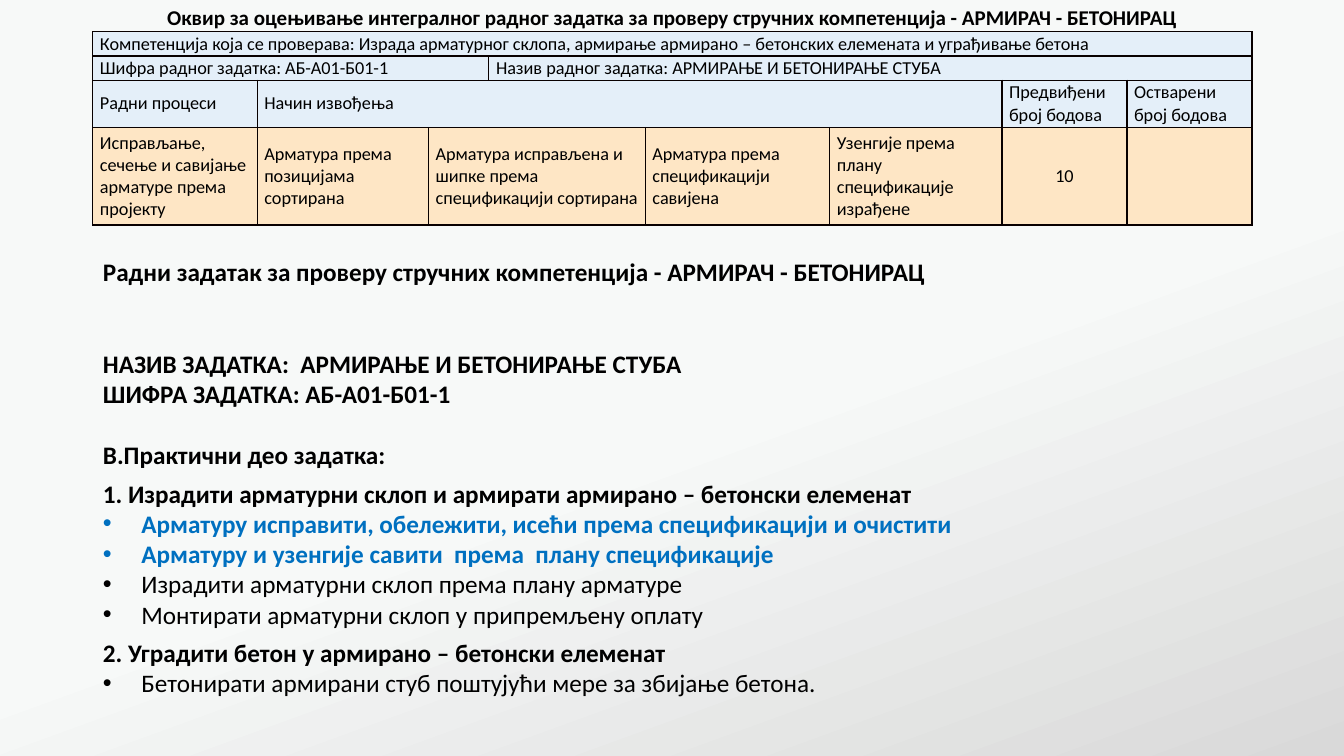
from lxml import etree
from pptx import Presentation
from pptx.dml import color
from pptx.enum import text
from pptx.oxml import ns
from pptx.util import Cm, Pt

FONT = "Calibri"
BLACK, BLUE = "000000", "0070C0"
BORDER, HEADER, TASK = "080000", "DBEBFA", "FEE6C5"
LEFT = Cm(2.34)
COLUMNS = [4.14, 4.32, 1.52, 3.94, 4.65, 4.34, 3.15, 3.15]
ROWS = [0.64, 0.61, 0.61, 1.19, 2.46]

# Each table row lists (text, number of columns spanned)
CELLS = [
    [("Оквир за оцењивање интегралног радног задатка за проверу стручних "
      "компетенција - АРМИРАЧ - БЕТОНИРАЦ", 8)],
    [("Компетенција која се проверава: Израда арматурног склопа, армирање "
      "армирано – бетонских елемената и уграђивање бетона", 8)],
    [("Шифра радног задатка: АБ-А01-Б01-1", 3),
     ("Назив радног задатка: АРМИРАЊЕ И БЕТОНИРАЊЕ СТУБА", 5)],
    [("Радни процеси", 1), ("Начин извођења", 5),
     ("Предвиђени број бодова", 1), ("Остварени број бодова", 1)],
    [("Исправљање, сечење и савијање арматуре према пројекту", 1),
     ("Арматура према позицијама сортирана", 1),
     ("Арматура исправљена и шипке према спецификацији сортирана", 2),
     ("Арматура према спецификацији савијена", 1),
     ("Узенгије према плану спецификације израђене", 1),
     ("10", 1), ("", 1)],
]

TITLE = "Радни задатак за проверу стручних компетенција - АРМИРАЧ - БЕТОНИРАЦ"
# text, bold, colour, bullet, space before, space after
TASK_LINES = [
    ("НАЗИВ ЗАДАТКА:  АРМИРАЊЕ И БЕТОНИРАЊЕ СТУБА", True, BLACK, False, 0, 0),
    ("ШИФРА ЗАДАТКА: АБ-А01-Б01-1", True, BLACK, False, 0, 0),
    ("B.Практични део задатка:", True, BLACK, False, 22, 6),
    ("1. Израдити арматурни склоп и армирати армирано – бетонски елеменат",
     True, BLACK, False, 0, 0),
    ("Арматуру исправити, обележити, исећи према спецификацији и очистити",
     True, BLUE, True, 0, 0),
    ("Арматуру и узенгије савити  према  плану спецификације",
     True, BLUE, True, 0, 0),
    ("Израдити арматурни склоп према плану арматуре",
     False, BLACK, True, 0, 0),
    ("Монтирати арматурни склоп у припремљену оплату",
     False, BLACK, True, 0, 6),
    ("2. Уградити бетон у армирано – бетонски елеменат",
     True, BLACK, False, 0, 0),
    ("Бетонирати армирани стуб поштујући мере за збијање бетона.",
     False, BLACK, True, 0, 0),
]


def rgb(value):
    return color.RGBColor.from_string(value)


def add_child(parent, tag, **attributes):
    child = etree.SubElement(parent, ns.qn(tag))
    for name, value in attributes.items():
        child.set(name, str(value))
    return child


def format_font(p, size, bold=False, colour=BLACK):
    p.font.name = FONT
    p.font.size = Pt(size)
    p.font.bold = bold
    p.font.color.rgb = rgb(colour)


def set_background(slide):
    fill = slide.background.fill
    fill.gradient()
    fill.gradient_angle = 110
    for stop, (position, colour) in zip(
            fill.gradient_stops, [(0, "D9D9D9"), (0.45, "F7F9F8")]):
        stop.position = position
        stop.color.rgb = rgb(colour)


def set_borders(cell, visible):
    """Draw the sides named in visible and hide the others."""
    tc_pr = cell._tc.get_or_add_tcPr()
    for side in "LRTB":
        line = add_child(tc_pr, f"a:ln{side}", w=Pt(1))
        if side in visible:
            add_child(add_child(line, "a:solidFill"), "a:srgbClr", val=BORDER)
        else:
            add_child(line, "a:noFill")


def fill_cell(cell, row):
    if row == 0:
        cell.fill.background()
        return
    cell.fill.solid()
    cell.fill.fore_color.rgb = rgb(TASK if row == 4 else HEADER)
    if row < 4:
        srgb = cell._tc.tcPr.find(".//" + ns.qn("a:solidFill")
                                  + "[last()]/" + ns.qn("a:srgbClr"))
        fill = cell._tc.tcPr.find(ns.qn("a:solidFill"))
        srgb = fill[0] if fill is not None else srgb
        add_child(srgb, "a:alpha", val=68000)


def write_cell(cell, content, row):
    cell.vertical_anchor = text.MSO_ANCHOR.MIDDLE
    cell.margin_left = cell.margin_right = Cm(0.18)
    cell.margin_top = cell.margin_bottom = 0
    p = cell.text_frame.paragraphs[0]
    p.text = content
    format_font(p, 15 if row == 0 else 13, bold=row == 0)
    if row == 0 or content.isdigit():
        p.alignment = text.PP_ALIGN.CENTER


def add_assessment_table(slide):
    table = slide.shapes.add_table(
        len(ROWS), len(COLUMNS), LEFT, Cm(0.15),
        Cm(sum(COLUMNS)), Cm(sum(ROWS))).table
    table.first_row = table.horz_banding = False
    for column, width in zip(table.columns, COLUMNS):
        column.width = Cm(width)
    for r, (height, contents) in enumerate(zip(ROWS, CELLS)):
        table.rows[r].height = Cm(height)
        for c in range(len(COLUMNS)):
            set_borders(table.cell(r, c), "B" if r == 0 else "LRTB")
            fill_cell(table.cell(r, c), r)
        c = 0
        for content, span in contents:
            cell = table.cell(r, c)
            if span > 1:
                cell.merge(table.cell(r, c + span - 1))
            write_cell(cell, content, r)
            c += span


def place(sp, top, height):
    """Move a placeholder and return its text frame, anchored at the top."""
    sp.left, sp.top, sp.width, sp.height = LEFT, Cm(top), Cm(22.02), Cm(height)
    tf = sp.text_frame
    tf.word_wrap = True
    tf.auto_size = text.MSO_AUTO_SIZE.NONE
    tf.vertical_anchor = text.MSO_ANCHOR.TOP
    return tf


def set_bullet(p, bullet):
    p_pr = p._p.get_or_add_pPr()
    indent = Cm(0.97) if bullet else 0
    p_pr.set("marL", str(indent))
    p_pr.set("indent", str(-indent))
    if bullet:
        add_child(p_pr, "a:buFont", typeface="Arial")
        add_child(p_pr, "a:buChar", char="•")
    else:
        add_child(p_pr, "a:buNone")


def write_title(sp):
    p = place(sp, 6.32, 1.02).paragraphs[0]
    p.text = TITLE
    p.alignment = text.PP_ALIGN.LEFT
    format_font(p, 18, bold=True)


def write_task(sp):
    tf = place(sp, 8.64, 9.9)
    for i, (line, bold, colour, bullet, before, after) in enumerate(TASK_LINES):
        p = tf.add_paragraph() if i else tf.paragraphs[0]
        p.text = line
        p.space_before, p.space_after = Pt(before), Pt(after)
        set_bullet(p, bullet)
        format_font(p, 18, bold, colour)


def main():
    prs = Presentation()
    prs.slide_width, prs.slide_height = Cm(33.87), Cm(19.05)
    slide = prs.slides.add_slide(prs.slide_layouts[1])
    set_background(slide)
    add_assessment_table(slide)
    write_title(slide.shapes.title)
    write_task(slide.placeholders[1])
    prs.save("out.pptx")


if __name__ == "__main__":
    main()
